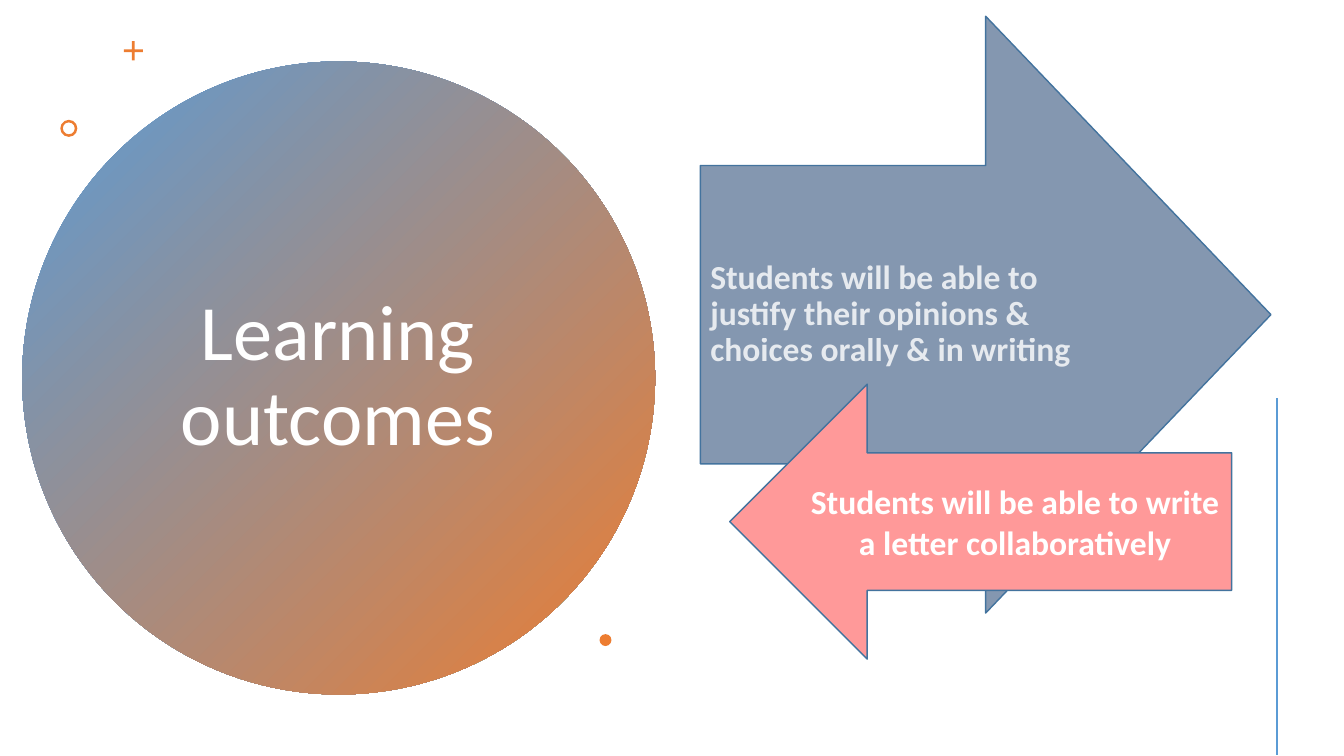
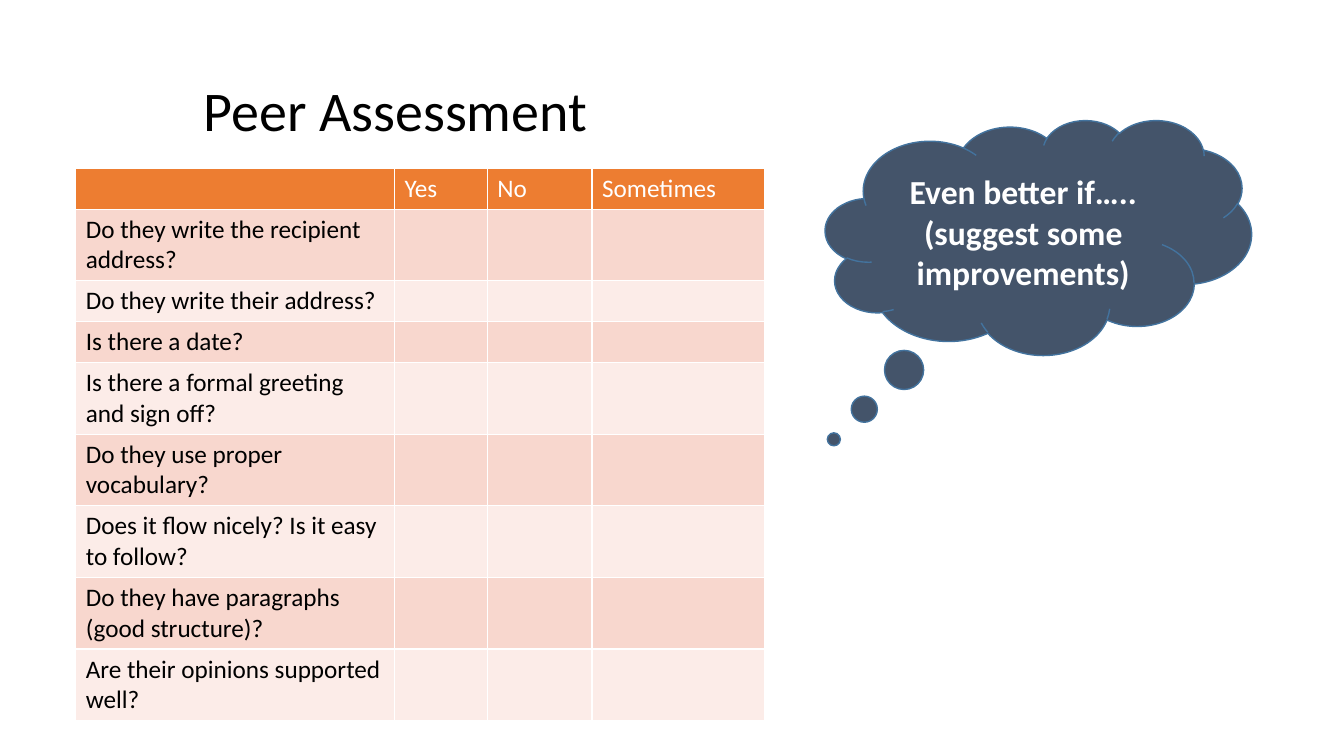
from dataclasses import dataclass
from typing import Optional

from lxml import etree
from pptx import Presentation
from pptx import util as u
from pptx.dml.color import RGBColor
from pptx.enum import shapes, text
from pptx.oxml import ns

Cm, Pt = u.Cm, u.Pt
MSO = shapes.MSO_SHAPE
LEFT, CENTER = text.PP_ALIGN.LEFT, text.PP_ALIGN.CENTER


@dataclass(frozen=True)
class Theme:
    font: str = "Calibri"
    white: str = "FFFFFF"
    black: str = "000000"
    blue: str = "5B9BD5"
    orange: str = "ED7D31"
    outline: str = "43739E"
    steel: str = "8497B0"
    pink: str = "FF9999"
    slate: str = "44546A"
    bands: tuple = ("F8D7CE", "FCECE8")
    hero: int = 56
    heading: int = 40
    callout: int = 24
    cell: int = 18


T = Theme()


@dataclass(frozen=True)
class Box:
    left: float
    top: float
    width: float
    height: float

    def lengths(self) -> tuple:
        return Cm(self.left), Cm(self.top), Cm(self.width), Cm(self.height)


@dataclass(frozen=True)
class Figure:
    kind: int
    box: Box
    fill: str
    line: Optional[str] = None
    adjust: tuple = ()
    lines: tuple = ()
    align: int = CENTER
    spacing: float = 1.0
    alpha: Optional[int] = None


ORNAMENTS = (
    Figure(MSO.CROSS, Box(3.12, 1.04, 0.48, 0.48), T.orange, adjust=(0.43,)),
    Figure(MSO.DONUT, Box(1.52, 3.02, 0.43, 0.43), T.orange, adjust=(0.15,)),
    Figure(MSO.OVAL, Box(15.11, 15.98, 0.3, 0.3), T.orange),
)
OUTCOMES = (
    Figure(MSO.RIGHT_ARROW, Box(17.65, 0.41, 14.38, 15.04), T.steel, T.outline,
           lines=("Students will be able to justify their opinions & choices orally & in writing",),
           align=LEFT, spacing=0.9, alpha=80),
    Figure(MSO.LEFT_ARROW, Box(18.39, 9.68, 12.65, 6.93), T.pink, T.outline,
           lines=("Students will be able to write a letter collaboratively",)),
)
IMPROVEMENTS = Figure(MSO.CLOUD_CALLOUT, Box(20.8, 3.02, 10.74, 5.92), T.slate, T.outline,
                      adjust=(-0.48, 0.86),
                      lines=("Even better if…..", "(suggest some improvements)"))
ANSWERS = ("", "Yes", "No", "Sometimes")
QUESTIONS = (
    "Do they write the recipient address?",
    "Do they write their address?",
    "Is there a date?",
    "Is there a formal greeting and sign off?",
    "Do they use proper vocabulary?",
    "Does it flow nicely? Is it easy to follow?",
    "Do they have paragraphs (good structure)?",
    "Are their opinions supported well?",
)
COLUMN_WIDTHS = (8.03, 2.34, 2.64, 4.34)
ROW_HEIGHT = 0.97


def rgb(color: str) -> RGBColor:
    return RGBColor.from_string(color)


def set_all(target, values: dict) -> None:
    for name, value in values.items():
        setattr(target, name, value)


def write(p, content: str, size: int, color: str, bold: bool = False,
          align: int = LEFT, spacing: float = 1.0):
    set_all(p, {"alignment": align, "line_spacing": spacing})
    r = p.add_run()
    r.text = content
    set_all(r.font, {"name": T.font, "size": Pt(size), "bold": bold})
    r.font.color.rgb = rgb(color)
    return r


def set_title(s, content: str, box: Box, size: int, color: str, align: int):
    title = s.shapes.title
    set_all(title, dict(zip(("left", "top", "width", "height"), box.lengths())))
    tf = title.text_frame
    set_all(tf, {"word_wrap": True, "auto_size": text.MSO_AUTO_SIZE.NONE,
                 "vertical_anchor": text.MSO_ANCHOR.MIDDLE})
    write(tf.paragraphs[0], content, size, color, align=align, spacing=0.9)
    return title


def draw(s, figure: Figure):
    sp = s.shapes.add_shape(figure.kind, *figure.box.lengths())
    sp.shadow.inherit = False
    sp.fill.solid()
    sp.fill.fore_color.rgb = rgb(figure.fill)
    if figure.line:
        sp.line.color.rgb = rgb(figure.line)
        sp.line.width = Pt(1)
    else:
        sp.line.fill.background()
    for i, value in enumerate(figure.adjust):
        sp.adjustments[i] = value
    tf = sp.text_frame
    set_all(tf, {"word_wrap": True, "vertical_anchor": text.MSO_ANCHOR.MIDDLE})
    for i, line in enumerate(figure.lines):
        p = tf.add_paragraph() if i else tf.paragraphs[0]
        r = write(p, line, T.callout, T.white, True, figure.align, figure.spacing)
        if figure.alpha:
            clr = r.font.fill._xPr.find(".//" + ns.qn("a:srgbClr"))
            etree.SubElement(clr, ns.qn("a:alpha"), val=str(figure.alpha * 1000))
    return sp


def draw_rule(s, x: float, top: float, bottom: float) -> None:
    rule = s.shapes.add_connector(shapes.MSO_CONNECTOR.STRAIGHT,
                                  Cm(x), Cm(top), Cm(x), Cm(bottom))
    rule.line.color.rgb = rgb(T.blue)
    rule.line.width = Pt(2)
    etree.SubElement(rule._element.spPr, ns.qn("a:effectLst"))


def style_cell(cell, fill: str) -> None:
    cell.fill.solid()
    cell.fill.fore_color.rgb = rgb(fill)
    tcPr = cell._tc.get_or_add_tcPr()
    for i, side in enumerate(("lnL", "lnR", "lnT", "lnB")):
        ln = etree.Element(ns.qn("a:" + side), w=str(Pt(1)))
        solid = etree.SubElement(ln, ns.qn("a:solidFill"))
        etree.SubElement(solid, ns.qn("a:srgbClr"), val=T.white)
        tcPr.insert(i, ln)


def draw_checklist(s, left: float, top: float) -> None:
    rows = [ANSWERS] + [(q, "", "", "") for q in QUESTIONS]
    box = Box(left, top, sum(COLUMN_WIDTHS), ROW_HEIGHT * len(rows))
    table = s.shapes.add_table(len(rows), len(ANSWERS), *box.lengths()).table
    set_all(table, {"first_row": False, "horz_banding": False})
    for column, width in zip(table.columns, COLUMN_WIDTHS):
        column.width = Cm(width)
    for i, values in enumerate(rows):
        table.rows[i].height = Cm(ROW_HEIGHT)
        fill = T.bands[(i - 1) % 2] if i else T.orange
        for j, value in enumerate(values):
            cell = table.cell(i, j)
            style_cell(cell, fill)
            if value:
                write(cell.text_frame.paragraphs[0], value, T.cell,
                      T.black if i else T.white)


def outcomes_slide(s) -> None:
    title = set_title(s, "Learning outcomes", Box(3.45, 3.58, 10.13, 11.86),
                      T.hero, T.white, CENTER)
    disc = draw(s, Figure(MSO.OVAL, Box(0.56, 1.55, 15.95, 15.95), T.blue))
    disc.fill.gradient()
    disc.fill.gradient_angle = 315
    for stop, color in zip(disc.fill.gradient_stops, (T.blue, T.orange)):
        stop.color.rgb = rgb(color)
    title._element.addprevious(disc._element)
    for ornament in ORNAMENTS:
        draw(s, ornament)
    right_arrow, left_arrow = OUTCOMES
    draw(s, right_arrow)
    draw_rule(s, 32.18, 10.03, 19.02)
    draw(s, left_arrow)


def assessment_slide(s) -> None:
    set_title(s, "Peer Assessment", Box(4.88, 1.02, 20, 3.68), T.heading, T.black, LEFT)
    draw_checklist(s, 1.91, 4.24)
    draw(s, IMPROVEMENTS)


def main() -> None:
    prs = Presentation()
    set_all(prs, {"slide_width": Cm(33.87), "slide_height": Cm(19.05)})
    title_only = prs.slide_layouts[5]
    for build in (outcomes_slide, assessment_slide):
        build(prs.slides.add_slide(title_only))
    prs.save("out.pptx")


if __name__ == "__main__":
    main()
